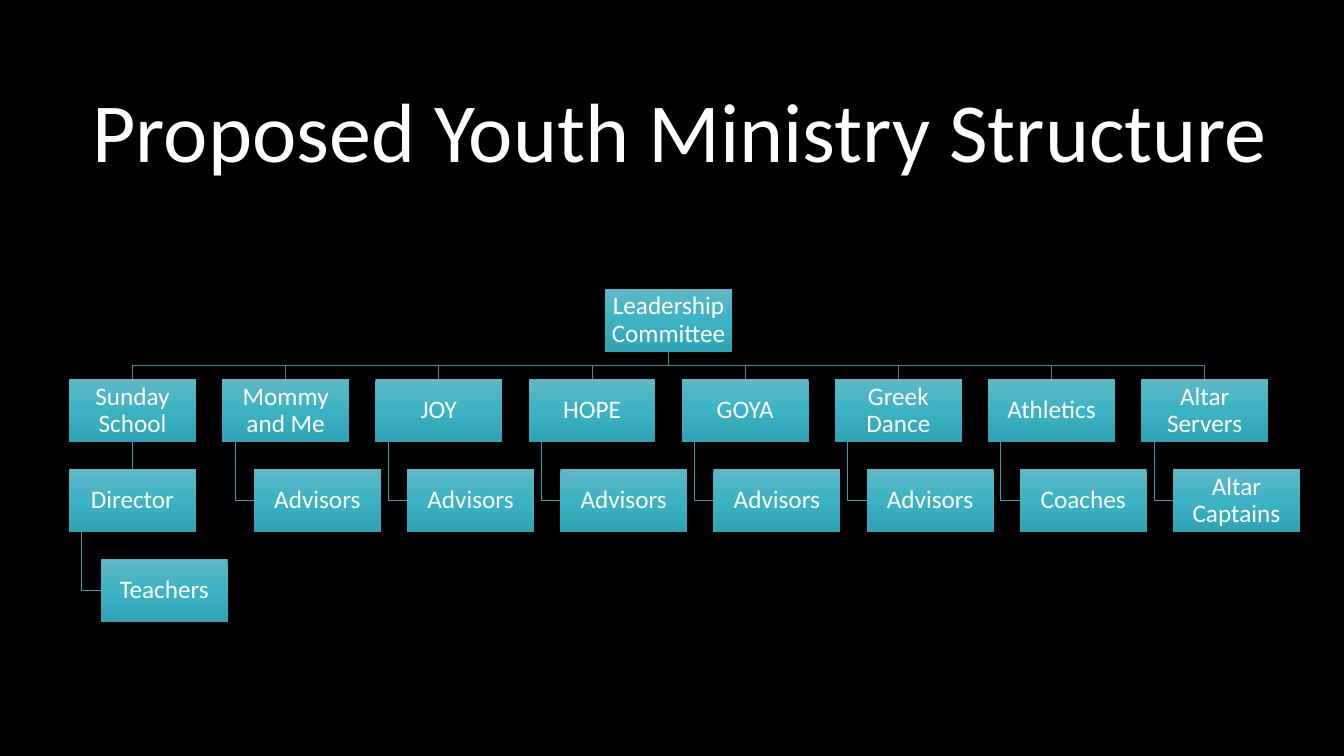
"""Build the organisation chart of the proposed youth ministry."""
from copy import deepcopy

from pptx import Presentation
from pptx import util as u
from pptx.dml.color import RGBColor
from pptx.enum import shapes, text
from pptx.oxml import ns, xmlchemy

BLACK = RGBColor(0x00, 0x00, 0x00)
WHITE = RGBColor(0xFF, 0xFF, 0xFF)
TRUNK = RGBColor(0x34, 0x8B, 0x97)
BRANCH = RGBColor(0x3B, 0x9E, 0xAC)
BOX_STOPS = [
    (0, RGBColor(0x5F, 0xB7, 0xC5)),
    (0.5, RGBColor(0x3B, 0xB3, 0xC3)),
    (1, RGBColor(0x2F, 0xA3, 0xB3)),
]

LEFT, TOP = 1.74, 7.28
BOX_W, BOX_H = 3.2, 1.59
COLUMN_STEP, ROW_STEP = 3.86, 2.27
INDENT, HANGER = 0.8, 0.32

GROUPS = [
    ("Sunday School", "Director"),
    ("Mommy and Me", "Advisors"),
    ("JOY", "Advisors"),
    ("HOPE", "Advisors"),
    ("GOYA", "Advisors"),
    ("Greek Dance", "Advisors"),
    ("Athletics", "Coaches"),
    ("Altar Servers", "Altar Captains"),
]


def apply(target, values):
    for name, value in values.items():
        setattr(target, name, value)


class ChartSlide:
    def __init__(self, deck):
        self.slide = deck.slides.add_slide(deck.slide_layouts[5])
        fill = self.slide.background.fill
        fill.solid()
        fill.fore_color.rgb = BLACK

    def label(self, box, words, size, frame_format, para_format):
        frame = box.text_frame
        apply(frame, frame_format)
        para = frame.paragraphs[0]
        apply(para, para_format)
        span = para.add_run()
        span.text = words
        apply(span.font, {"name": "Calibri", "size": u.Pt(size)})
        span.font.color.rgb = WHITE

    def title(self, words, left, top, width, height):
        box = self.slide.shapes.title
        apply(box, {"left": u.Cm(left), "top": u.Cm(top),
                    "width": u.Cm(width), "height": u.Cm(height)})
        self.label(
            box, words, 60,
            {"word_wrap": False, "vertical_anchor": text.MSO_ANCHOR.TOP,
             "auto_size": text.MSO_AUTO_SIZE.SHAPE_TO_FIT_TEXT},
            {"alignment": text.PP_ALIGN.LEFT, "line_spacing": 1.0})

    def box(self, words, left, top):
        box = self.slide.shapes.add_shape(
            shapes.MSO_SHAPE.RECTANGLE,
            u.Cm(left), u.Cm(top), u.Cm(BOX_W), u.Cm(BOX_H))
        box.shadow.inherit = False
        box.line.fill.background()
        box.fill.gradient()
        box.fill.gradient_angle = 270
        stop_list = box._element.spPr.find(ns.qn("a:gradFill")).find(ns.qn("a:gsLst"))
        stop_list.insert(1, deepcopy(stop_list[0]))
        for stop, (position, color) in zip(box.fill.gradient_stops, BOX_STOPS):
            stop.position = position
            stop.color.rgb = color
        inset = u.Cm(0.03)
        self.label(
            box, words, 18,
            {"word_wrap": True, "vertical_anchor": text.MSO_ANCHOR.MIDDLE,
             "margin_left": inset, "margin_right": inset,
             "margin_top": inset, "margin_bottom": inset},
            {"alignment": text.PP_ALIGN.CENTER, "line_spacing": 0.9})

    def stroke(self, line, color):
        line.width = u.Pt(0.5)
        line.color.rgb = color

    def elbow(self, points, color):
        corners = [(u.Cm(x), u.Cm(y)) for x, y in points]
        builder = self.slide.shapes.build_freeform(*corners[0])
        builder.add_line_segments(corners[1:], close=False)
        link = builder.convert_to_shape()
        link.shadow.inherit = False
        link.fill.background()
        self.stroke(link.line, color)

    def drop(self, x, top, bottom, color):
        link = self.slide.shapes.add_connector(
            shapes.MSO_CONNECTOR.STRAIGHT,
            u.Cm(x), u.Cm(top), u.Cm(x), u.Cm(bottom))
        self.stroke(link.line, color)
        link._element.spPr.append(xmlchemy.OxmlElement("a:effectLst"))

    def hanger(self, left, top):
        x = left + HANGER
        middle = top + ROW_STEP + BOX_H / 2
        self.elbow([(x, top + BOX_H), (x, middle), (left + INDENT, middle)],
                   BRANCH)


def main():
    deck = Presentation()
    apply(deck, {"slide_width": u.Cm(33.87), "slide_height": u.Cm(19.05)})
    page = ChartSlide(deck)
    page.title("Proposed Youth Ministry Structure", 2.08, 1.85, 30.68, 2.82)

    rows = [TOP + row * ROW_STEP for row in range(4)]
    columns = [LEFT + column * COLUMN_STEP for column in range(len(GROUPS))]
    root_left = (columns[0] + columns[-1]) / 2
    root_x = root_left + BOX_W / 2
    trunk_y = (rows[0] + BOX_H + rows[1]) / 2

    for left in columns:
        x = left + BOX_W / 2
        page.elbow([(root_x, rows[0] + BOX_H), (root_x, trunk_y),
                    (x, trunk_y), (x, rows[1])], TRUNK)
    page.drop(LEFT + BOX_W / 2, rows[1] + BOX_H, rows[2], BRANCH)
    page.hanger(LEFT, rows[2])
    for left in columns[1:]:
        page.hanger(left, rows[1])

    page.box("Leadership Committee", root_left, rows[0])
    for left, (group, helpers) in zip(columns, GROUPS):
        page.box(group, left, rows[1])
        page.box(helpers, left if left == LEFT else left + INDENT, rows[2])
    page.box("Teachers", LEFT + INDENT, rows[3])

    deck.save("out.pptx")


if __name__ == "__main__":
    main()
